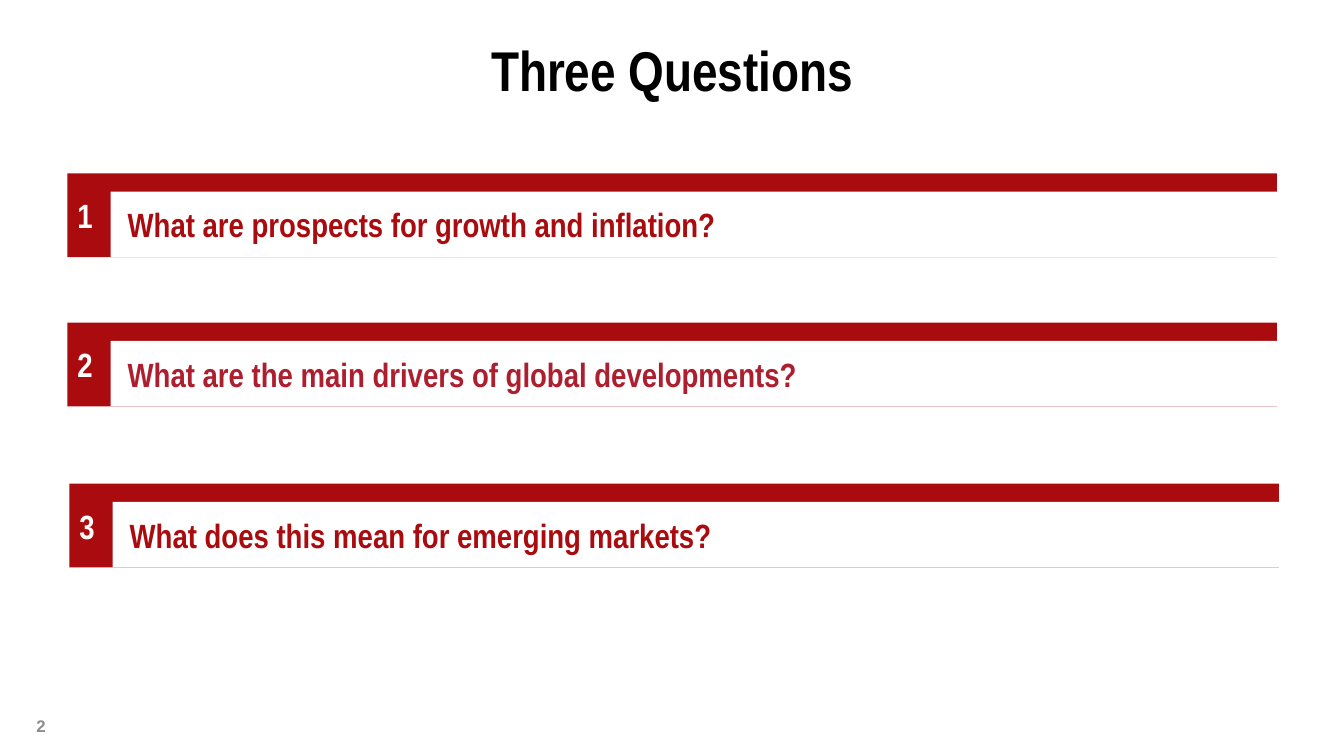
from pptx import Presentation
from pptx.dml.color import RGBColor
from pptx.enum.shapes import MSO_SHAPE
from pptx.enum.text import MSO_ANCHOR, PP_ALIGN
from pptx.util import Cm, Pt

COLORS = {
    "red": "AA0B0E",
    "rose": "AD1F2F",
    "white": "FFFFFF",
    "black": "000000",
    "gray": "8C8C8C",
}

# left, top, panel width, text color, question
ROWS = [
    (1.7, 4.37, 30.48, "red", "What are prospects for growth and inflation?"),
    (1.7, 8.13, 29.72, "rose", "What are the main drivers of global developments?"),
    (1.75, 12.19, 29.72, "red", "What does this mean for emerging markets?"),
]
BAND_W, BAND_H = 30.48, 2.11
TAB_W, BAR_H = 1.09, 0.46


def write(shape, text, size, color, align=PP_ALIGN.LEFT,
          anchor=MSO_ANCHOR.MIDDLE, face="Arial Narrow"):
    frame = shape.text_frame
    frame.word_wrap = True
    frame.vertical_anchor = anchor
    para = frame.paragraphs[0]
    para.text = text
    para.alignment = align
    font = para.font
    font.name, font.size, font.bold = face, Pt(size), True
    font.color.rgb = RGBColor.from_string(COLORS[color])
    return para


def add_rect(slide, left, top, width, height, color):
    rect = slide.shapes.add_shape(
        MSO_SHAPE.RECTANGLE, Cm(left), Cm(top), Cm(width), Cm(height))
    rect.shadow.inherit = False
    rect.fill.solid()
    rect.fill.fore_color.rgb = RGBColor.from_string(COLORS[color])
    rect.line.fill.background()
    return rect


def add_title(slide, left, top, width, height):
    box = slide.shapes.add_textbox(Cm(left), Cm(top), Cm(width), Cm(height))
    write(box, "Three Questions", 40, "black", PP_ALIGN.CENTER)


def add_number(slide, left, top, width, height):
    box = slide.shapes.add_textbox(Cm(left), Cm(top), Cm(width), Cm(height))
    write(box, "2", 12, "gray", PP_ALIGN.RIGHT, MSO_ANCHOR.BOTTOM, "Arial")


def add_row(slide, number, left, top, width, color, question):
    """Lay a white panel over a red band, leaving a top bar and a number tab."""
    band = add_rect(slide, left, top, BAND_W, BAND_H, "red")
    write(band, str(number), 24, "white")
    panel = add_rect(slide, left + TAB_W, top + BAR_H,
                     width, BAND_H - BAR_H, "white")
    para = write(panel, question, 24, color)
    props = para._p.get_or_add_pPr()
    props.set("marL", str(Cm(0.18)))
    props.set("indent", "0")


def main():
    deck = Presentation()
    deck.slide_width, deck.slide_height = Cm(33.87), Cm(19.05)
    slide = deck.slides.add_slide(deck.slide_layouts[6])
    add_title(slide, 1.7, 0.05, 30.48, 3.38)
    add_number(slide, 0.05, 17.65, 1.35, 1.02)
    for number, row in enumerate(ROWS, 1):
        add_row(slide, number, *row)
    deck.save("out.pptx")


if __name__ == "__main__":
    main()
